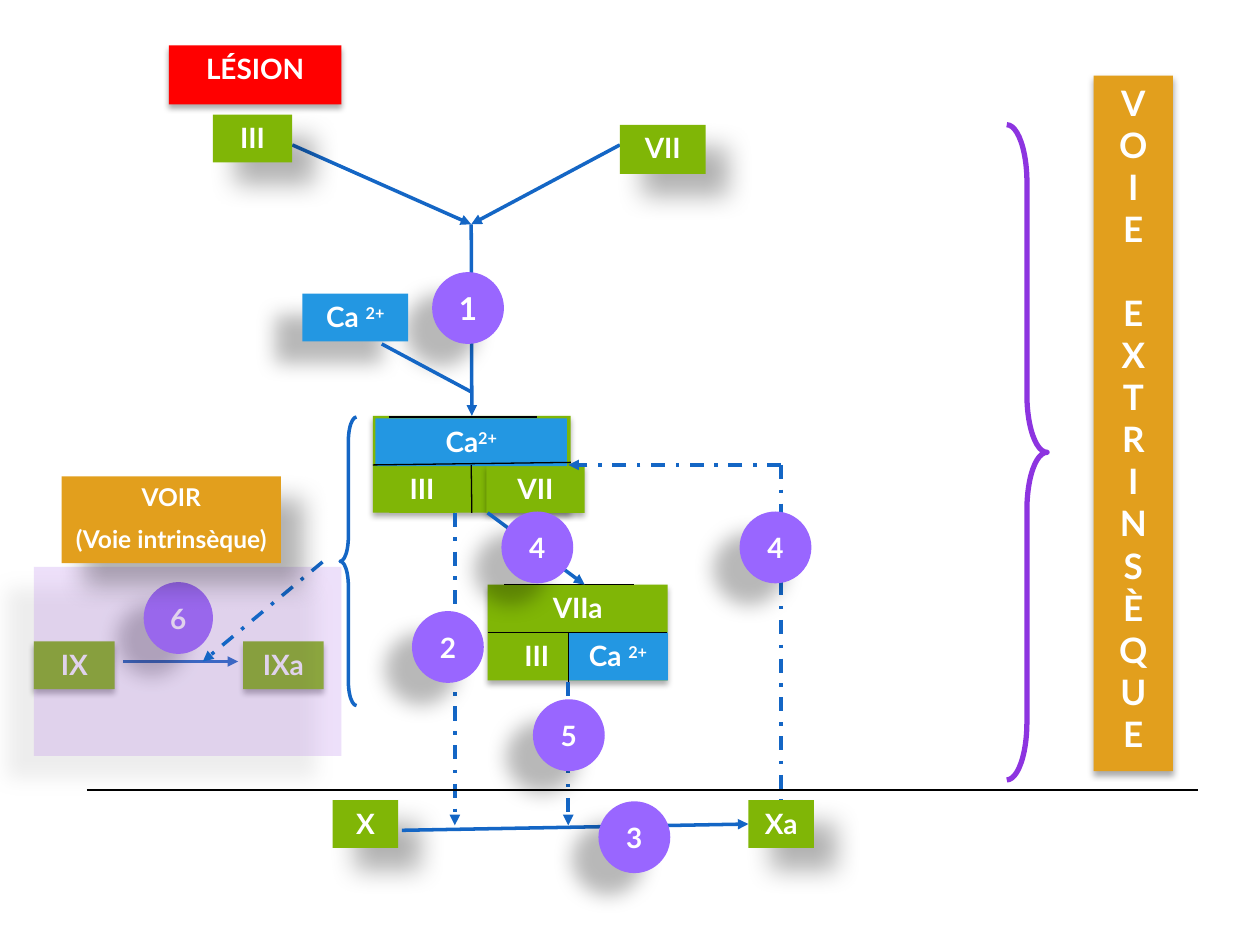
from dataclasses import dataclass
from typing import NamedTuple

import lxml.etree
import pptx
import pptx.dml.color
import pptx.enum.dml
import pptx.enum.shapes
import pptx.enum.text
import pptx.oxml.ns
import pptx.util

RGBColor = pptx.dml.color.RGBColor
Shape = pptx.enum.shapes.MSO_SHAPE
Anchor = pptx.enum.text.MSO_ANCHOR
DASH_DOT = pptx.enum.dml.MSO_LINE.DASH_DOT
qn = pptx.oxml.ns.qn

EMU_PER_PX = 9144  # 100 px to the inch
BLACK = RGBColor(0x00, 0x00, 0x00)
WHITE = RGBColor(0xFF, 0xFF, 0xFF)
GREEN = RGBColor(0x80, 0xB6, 0x06)
SKY = RGBColor(0x23, 0x97, 0xE2)
BLUE = RGBColor(0x14, 0x66, 0xC5)
VIOLET = RGBColor(0x99, 0x66, 0xFF)
PURPLE = RGBColor(0x8D, 0x34, 0xE0)
LILAC = RGBColor(0xBB, 0x85, 0xEC)
AMBER = RGBColor(0xE2, 0x9F, 0x1D)
RED = RGBColor(0xFF, 0x00, 0x00)

TOP, LEFT, BOTTOM, RIGHT = range(4)


class Shadow(NamedTuple):
    opacity: int
    blur: float
    distance: float
    angle: int


FAR_RIGHT = Shadow(30, 15, 18, 45)
FAR_LEFT = Shadow(28, 11.8, 19.7, 141)
NEAR = Shadow(32, 3.5, 2.2, 90)


@dataclass
class Box:
    left: int
    top: int
    width: int
    height: int
    fill: RGBColor
    lines: tuple[str, ...] = ()
    shadow: Shadow | None = None
    superscript: str = ""
    size: int = 16
    gap: int = 0
    gap_before: tuple[int, ...] = ()
    opacity: int = 100
    name: str = ""
    kind: Shape = Shape.RECTANGLE
    anchor: Anchor = Anchor.TOP


@dataclass
class Line:
    start: tuple[int, int]
    end: tuple[int, int]
    color: RGBColor = BLUE
    width: float = 2
    arrow: bool = False
    dashed: bool = False
    joins_start: tuple[str, int] | None = None
    joins_end: tuple[str, int] | None = None


@dataclass
class Brace:
    kind: Shape
    left: int
    top: int
    width: int
    height: int
    curl: float
    color: RGBColor
    line_width: int


def step(number: str, left: int, top: int, width: int = 57, size: int = 16) -> Box:
    return Box(left, top, width, 57, VIOLET, (number,), FAR_LEFT, size=size,
               kind=Shape.OVAL, anchor=Anchor.MIDDLE)


def border(start: tuple[int, int], end: tuple[int, int], **options) -> Line:
    return Line(start, end, BLACK, 0.75, **options)


ELEMENTS: list[Box | Line | Brace] = [
    Line((374, 178), (374, 331), arrow=True, joins_end=("complex", TOP)),
    Line((492, 115), (374, 178), arrow=True),
    Line((232, 115), (374, 178), arrow=True),
    Box(169, 91, 63, 38, GREEN, ("III",), FAR_RIGHT),
    Box(492, 99, 68, 39, GREEN, ("VII",), FAR_RIGHT),
    Box(296, 330, 157, 77, GREEN, shadow=NEAR, name="complex"),
    Box(386, 369, 78, 38, GREEN, ("VII",), NEAR),
    Box(309, 369, 52, 38, GREEN, ("III",)),
    Box(298, 332, 152, 38, SKY, ("Ca",), superscript="2+"),
    Box(264, 635, 52, 38, GREEN, ("X",), FAR_RIGHT),
    Box(594, 635, 52, 38, GREEN, ("Xa",), FAR_RIGHT, name="Xa"),
    border((296, 369), (453, 367)),
    border((309, 331), (426, 331)),
    border((374, 369), (374, 407), joins_end=("complex", BOTTOM)),
    Box(387, 464, 143, 76, GREEN, shadow=NEAR),
    Box(426, 464, 65, 38, GREEN, ("VIIa",)),
    Box(400, 502, 52, 30, GREEN, ("III",)),
    Box(451, 502, 79, 38, SKY, ("Ca ",), superscript="2+"),
    border((400, 464), (503, 464)),
    border((387, 502), (529, 502)),
    border((451, 502), (451, 541)),
    Line((387, 407), (464, 464), arrow=True),
    Line((319, 659), (594, 655), arrow=True, joins_end=("Xa", LEFT)),
    Line((451, 541), (451, 655), arrow=True, dashed=True),
    Line((361, 407), (361, 655), arrow=True, dashed=True),
    step("1", 343, 216, size=18),
    step("4", 398, 406),
    Box(240, 233, 84, 38, SKY, ("Ca ",), FAR_LEFT, superscript="2+"),
    Line((303, 273), (374, 311)),
    Line((620, 369), (451, 369), arrow=True, dashed=True),
    Line((620, 369), (620, 636), dashed=True, joins_end=("Xa", TOP)),
    Brace(Shape.LEFT_BRACE, 270, 331, 13, 229, 1.49, BLUE, 2),
    Box(193, 509, 64, 38, GREEN, ("IXa",), NEAR),
    Line((98, 525), (189, 525), arrow=True),
    step("6", 114, 462, width=55),
    Box(868, 60, 63, 552, AMBER, tuple("VOIEEXTRINSÈQUE"), NEAR, size=20,
        gap=24, gap_before=(4,)),
    Box(134, 36, 137, 47, RED, ("LÉSION",), NEAR),
    Box(27, 509, 64, 38, GREEN, ("IX",), NEAR),
    Box(27, 450, 244, 150, LILAC, shadow=FAR_LEFT, opacity=25),
    step("3", 475, 636),
    Line((256, 446), (161, 525), arrow=True, dashed=True),
    step("4", 587, 406),
    Brace(Shape.RIGHT_BRACE, 799, 99, 32, 520, 1.43, PURPLE, 3),
    step("2", 327, 485),
    step("5", 423, 555),
    Box(49, 378, 174, 69, AMBER, ("VOIR", "(Voie intrinsèque)"), FAR_RIGHT,
        size=14, gap=7, gap_before=(1,)),
    Line((69, 627), (951, 627), BLACK, 1),
]


def px(*lengths: int) -> list[pptx.util.Emu]:
    return [pptx.util.Emu(length * EMU_PER_PX) for length in lengths]


def apply_format(target, values: dict) -> None:
    for attribute, value in values.items():
        setattr(target, attribute, value)


def add_run(paragraph, text: str, size: int):
    run = paragraph.add_run()
    run.text = text
    apply_format(run.font, {"name": "Lato", "size": pptx.util.Pt(size), "bold": True})
    run.font.color.rgb = WHITE
    return run


def write_text(shape, box: Box) -> None:
    frame = shape.text_frame
    apply_format(frame, {"word_wrap": False, "vertical_anchor": box.anchor})
    for index, text in enumerate(box.lines):
        paragraph = frame.add_paragraph() if index else frame.paragraphs[0]
        paragraph.alignment = pptx.enum.text.PP_ALIGN.CENTER
        if index in box.gap_before:
            paragraph.space_before = pptx.util.Pt(box.gap)
        add_run(paragraph, text, box.size)
    if box.superscript:
        raised = add_run(frame.paragraphs[-1], box.superscript, box.size)
        raised.font._element.set("baseline", "30000")


def cast_shadow(shape, shadow: Shadow) -> None:
    effects = shape._element.spPr.find(qn("a:effectLst"))
    outer = lxml.etree.SubElement(effects, qn("a:outerShdw"), {
        "blurRad": str(pptx.util.Pt(shadow.blur)),
        "dist": str(pptx.util.Pt(shadow.distance)),
        "dir": str(shadow.angle * 60000),
        "algn": "ctr",
        "rotWithShape": "0",
    })
    color = lxml.etree.SubElement(outer, qn("a:srgbClr"), val=str(BLACK))
    lxml.etree.SubElement(color, qn("a:alpha"), val=str(shadow.opacity * 1000))


def draw_box(slide, box: Box):
    shape = slide.shapes.add_shape(box.kind, *px(box.left, box.top, box.width, box.height))
    shape.fill.solid()
    shape.fill.fore_color.rgb = box.fill
    if box.opacity < 100:
        color = shape._element.spPr.find(qn("a:solidFill")).find(qn("a:srgbClr"))
        lxml.etree.SubElement(color, qn("a:alpha"), val=str(box.opacity * 1000))
    shape.line.fill.background()
    shape.shadow.inherit = False
    if box.shadow:
        cast_shadow(shape, box.shadow)
    if box.lines:
        write_text(shape, box)
    return shape


def draw_line(slide, line: Line):
    connector = slide.shapes.add_connector(
        pptx.enum.shapes.MSO_CONNECTOR.STRAIGHT, *px(*line.start, *line.end))
    connector.line.color.rgb = line.color
    connector.line.width = pptx.util.Pt(line.width)
    if line.dashed:
        connector.line.dash_style = DASH_DOT
    if line.arrow:
        lxml.etree.SubElement(connector.line._get_or_add_ln(), qn("a:tailEnd"), type="triangle")
    lxml.etree.SubElement(connector._element.spPr, qn("a:effectLst"))
    return connector


def draw_brace(slide, brace: Brace) -> None:
    shape = slide.shapes.add_shape(
        brace.kind, *px(brace.left, brace.top, brace.width, brace.height))
    shape.adjustments[0] = brace.curl
    shape.fill.background()
    shape.line.color.rgb = brace.color
    shape.line.width = pptx.util.Pt(brace.line_width)
    shape.shadow.inherit = False


def main() -> None:
    presentation = pptx.Presentation()
    presentation.slide_width, presentation.slide_height = px(1000, 750)
    slide = presentation.slides.add_slide(presentation.slide_layouts[6])
    named_boxes = {}
    connectors = []
    for element in ELEMENTS:
        if isinstance(element, Box):
            named_boxes[element.name] = draw_box(slide, element)
        elif isinstance(element, Line):
            connectors.append((element, draw_line(slide, element)))
        else:
            draw_brace(slide, element)
    for line, connector in connectors:
        for joint, connect in ((line.joins_start, connector.begin_connect),
                               (line.joins_end, connector.end_connect)):
            if joint:
                name, side = joint
                connect(named_boxes[name], side)
    presentation.save("out.pptx")


if __name__ == "__main__":
    main()
